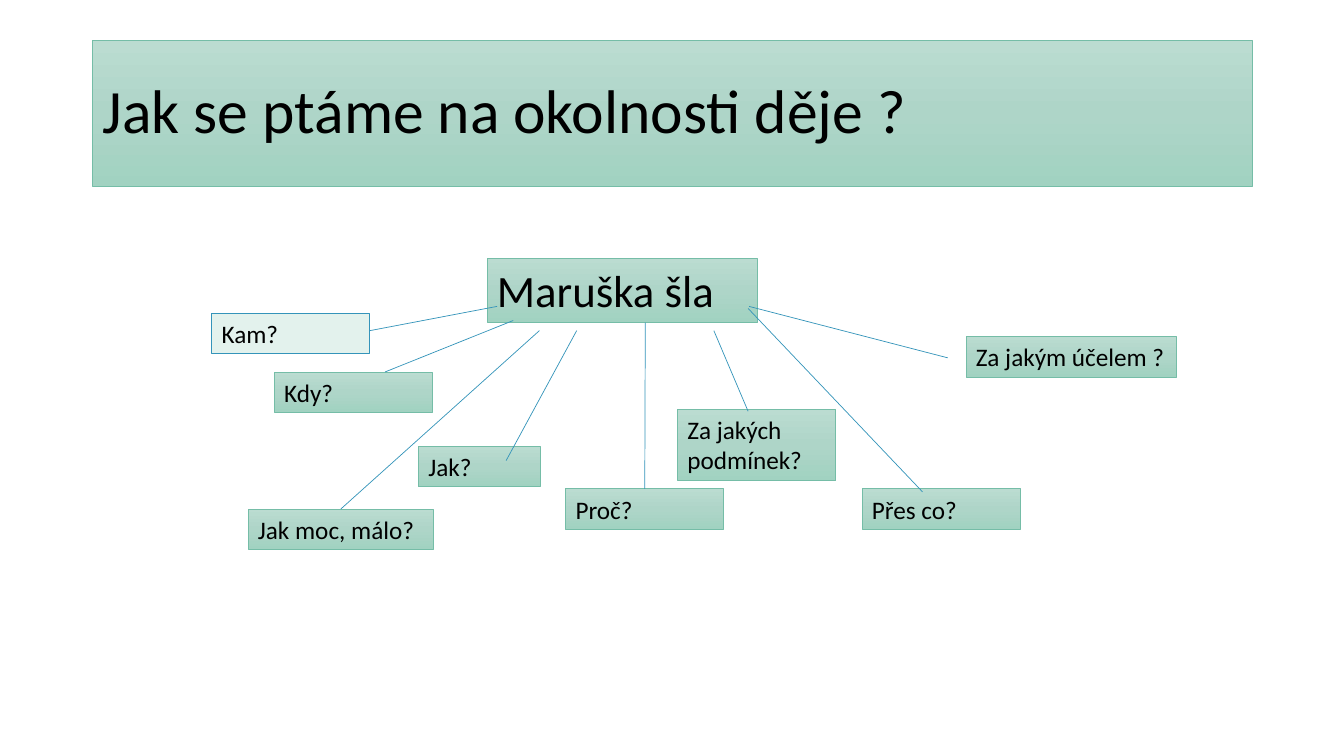
from copy import deepcopy

from lxml.etree import SubElement
from pptx import Presentation
from pptx.dml.color import RGBColor
from pptx.enum.shapes import MSO_CONNECTOR
from pptx.enum.text import MSO_ANCHOR, MSO_AUTO_SIZE, PP_ALIGN
from pptx.oxml.ns import qn
from pptx.util import Pt

PX = 9144  # EMU per px, 100 px to the inch

THEME = {
    "font": "Calibri",
    "text": RGBColor.from_string("000000"),
    "gradient": [RGBColor.from_string(c) for c in ("BBDCD1", "AED5C8", "A1D2C1")],
    "green_line": RGBColor.from_string("75BDA7"),
    "pale_fill": RGBColor.from_string("E3F2ED"),
    "blue_line": RGBColor.from_string("3494BA"),
    "title_size": 44,
    "sentence_size": 32,
    "question_size": 18,
}


def write(shape, text, size, anchor=MSO_ANCHOR.TOP, spacing=1.0,
          auto_size=MSO_AUTO_SIZE.SHAPE_TO_FIT_TEXT):
    frame = shape.text_frame
    frame.word_wrap = True
    frame.auto_size = auto_size
    frame.vertical_anchor = anchor
    para = frame.paragraphs[0]
    para.alignment = PP_ALIGN.LEFT
    para.line_spacing = spacing
    span = para.add_run()
    span.text = text
    span.font.name = THEME["font"]
    span.font.size = Pt(size)
    span.font.color.rgb = THEME["text"]


def paint_green(shape):
    shape.fill.gradient()
    shape.fill.gradient_angle = 270
    stop_list = shape.element.spPr.find(".//" + qn("a:gsLst"))
    middle = deepcopy(stop_list[0])
    middle.set("pos", "50000")
    stop_list.insert(1, middle)
    for stop, color in zip(shape.fill.gradient_stops, THEME["gradient"]):
        stop.color.rgb = color
    shape.line.color.rgb = THEME["green_line"]
    shape.line.width = Pt(0.5)


deck = Presentation()
deck.slide_width, deck.slide_height = 1333 * PX, 750 * PX
page = deck.slides.add_slide(deck.slide_layouts[5])

# Title
title = page.shapes.title
title.left, title.top, title.width, title.height = (v * PX for v in (92, 40, 1150, 145))
paint_green(title)
write(title, "Jak se ptáme na okolnosti děje ?", THEME["title_size"],
      anchor=MSO_ANCHOR.MIDDLE, spacing=0.9, auto_size=MSO_AUTO_SIZE.NONE)

# Sentence and the questions around it: left, top, width, height
boxes = {}
for text, *place in [
    ("Maruška šla", 483, 256, 268, 64),
    ("Přes co?", 855, 485, 157, 40),
    ("Za jakým účelem ?", 958, 334, 209, 40),
    ("Proč?", 561, 485, 157, 40),
    ("Jak?", 415, 443, 121, 40),
    ("Kdy?", 272, 369, 157, 40),
    ("Kam?", 210, 311, 157, 40),
    ("Jak moc, málo?", 246, 505, 184, 40),
    ("Za jakých podmínek?", 672, 406, 157, 71),
]:
    box = boxes[text] = page.shapes.add_textbox(*(v * PX for v in place))
    if text == "Kam?":
        box.fill.solid()
        box.fill.fore_color.rgb = THEME["pale_fill"]
        box.line.color.rgb = THEME["blue_line"]
        box.line.width = Pt(0.75)
    else:
        paint_green(box)
    size = "sentence_size" if text == "Maruška šla" else "question_size"
    write(box, text, THEME[size])

# Lines from the questions to the sentence, some joined to a box's top
for start_box, *ends in [
    (None, 367, 328, 493, 304),
    (None, 502, 457, 572, 328),
    ("Proč?", 640, 485, 640, 320),
    (None, 742, 306, 915, 488),
    (None, 509, 318, 382, 369),
    (None, 743, 304, 940, 355),
    (None, 708, 328, 742, 408),
    ("Jak moc, málo?", 338, 505, 535, 328),
]:
    link = page.shapes.add_connector(MSO_CONNECTOR.STRAIGHT, *(v * PX for v in ends))
    if start_box:
        link.begin_connect(boxes[start_box], 0)
    link.line.color.rgb = THEME["blue_line"]
    link.line.width = Pt(0.5)
    SubElement(link.element.spPr, qn("a:effectLst"))

deck.save("out.pptx")
